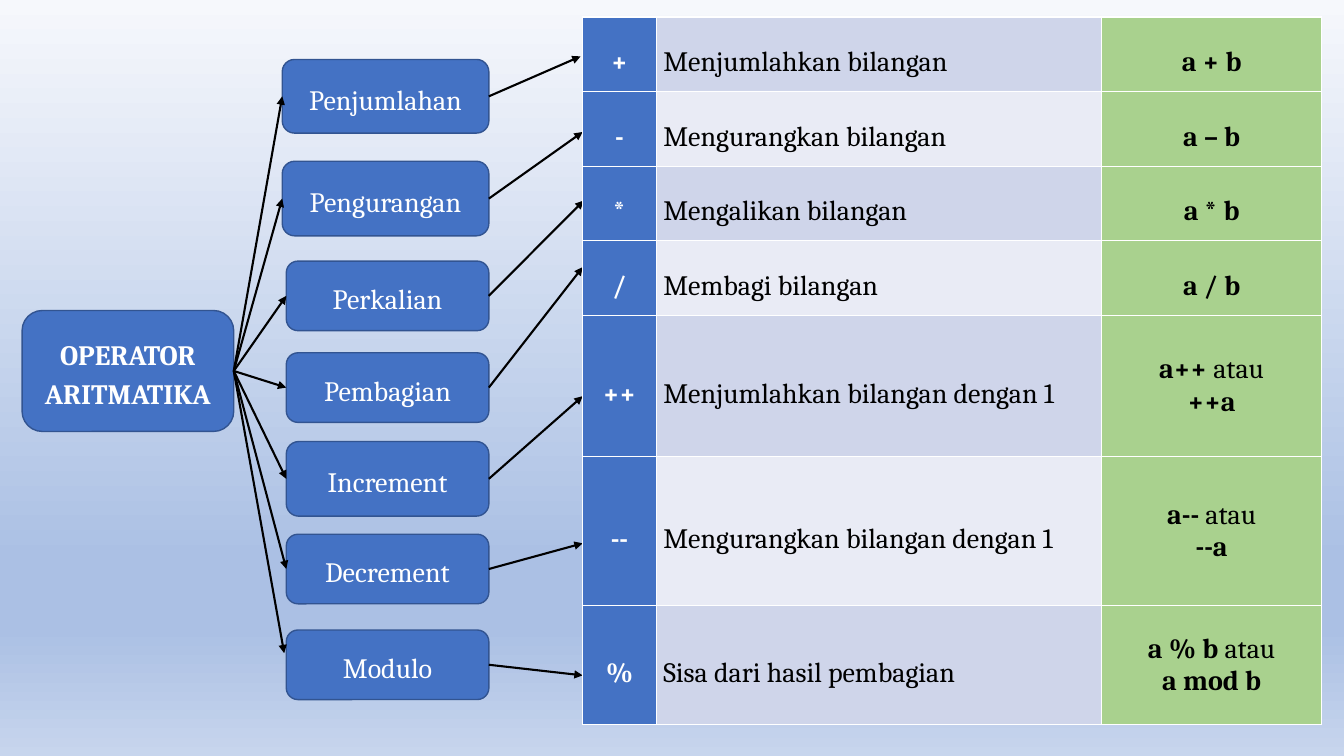
from dataclasses import dataclass
from typing import NamedTuple

from lxml.etree import SubElement
from pptx import Presentation
from pptx.dml.color import RGBColor
from pptx.enum.shapes import MSO_CONNECTOR, MSO_SHAPE
from pptx.enum.text import MSO_ANCHOR, PP_ALIGN
from pptx.oxml.ns import qn
from pptx.util import Pt


@dataclass(frozen=True)
class Theme:
    font: str = "Cambria"
    text_size: int = 20
    blue: str = "4472C4"
    outline: str = "325491"
    white: str = "FFFFFF"
    black: str = "000000"
    green: str = "A9D18E"
    bands: tuple = ("CFD5EA", "E9EBF5")
    background: tuple = ((0, "F6F8FC"), (74, "ABC0E4"), (83, "ABC0E4"), (100, "C7D5ED"))


class Operator(NamedTuple):
    name: str
    left: float
    top: float
    height: float
    arrow_x: float
    arrow_y: float
    row_height: float
    symbol: str
    meaning: str
    formula: tuple


THEME = Theme()
BOX_RIGHT = 349.2
LEFT, RIGHT = 1, 3
TABLE_LEFT, TABLE_TOP = 416.2, 12.2
COLUMN_WIDTHS = (52.6, 318.2, 157)
OPERATORS = (
    Operator("Penjumlahan", 201.6, 42.5, 52.6, 414.7, 40.3, 53.3,
             "+", "Menjumlahkan bilangan", ("a + b",)),
    Operator("Pengurangan", 201.6, 115.2, 53.3, 416.2, 94.3, 53.3,
             "-", "Mengurangkan bilangan", ("a – b",)),
    Operator("Perkalian", 204.5, 186.5, 49.7, 416.9, 143.3, 53.3,
             "*", "Mengalikan bilangan", ("a * b",)),
    Operator("Pembagian", 204.5, 252, 49.7, 416.2, 190.8, 53.3,
             "/", "Membagi bilangan", ("a / b",)),
    Operator("Increment", 204.5, 315.4, 53.3, 416.2, 283, 100.8,
             "++", "Menjumlahkan bilangan dengan 1", ("a++", "++a")),
    Operator("Decrement", 204.5, 381.6, 49.7, 416.2, 388.1, 106.6,
             "--", "Mengurangkan bilangan dengan 1", ("a--", "--a")),
    Operator("Modulo", 204.5, 450, 49.7, 416.2, 482.4, 85,
             "%", "Sisa dari hasil pembagian", ("a % b", "a mod b")),
)


def color(value):
    return RGBColor.from_string(value)


def add_text(paragraph, text, *, ink=THEME.black, bold=False,
             align=PP_ALIGN.CENTER, spacing=1.5):
    paragraph.alignment = align
    paragraph.line_spacing = spacing
    run = paragraph.add_run()
    run.text = text
    run.font.name = THEME.font
    run.font.size = Pt(THEME.text_size)
    run.font.bold = bold
    run.font.color.rgb = color(ink)


def paint_background(slide):
    fill = slide.background.fill
    fill.gradient()
    fill.gradient_angle = 270
    stops = slide.element.xpath(".//a:gsLst")[0]
    for stop in list(stops):
        stops.remove(stop)
    for position, value in THEME.background:
        stop = SubElement(stops, qn("a:gs"), pos=str(position * 1000))
        SubElement(stop, qn("a:srgbClr"), val=value)


def add_box(slide, text, left, top, width, height, *, bold=False):
    shape = slide.shapes.add_shape(
        MSO_SHAPE.ROUNDED_RECTANGLE, Pt(left), Pt(top), Pt(width), Pt(height))
    shape.shadow.inherit = False
    shape.fill.solid()
    shape.fill.fore_color.rgb = color(THEME.blue)
    shape.line.color.rgb = color(THEME.outline)
    shape.line.width = Pt(1)
    frame = shape.text_frame
    frame.word_wrap = True
    frame.vertical_anchor = MSO_ANCHOR.MIDDLE
    add_text(frame.paragraphs[0], text, ink=THEME.white, bold=bold, spacing=1.15)
    return shape


def add_arrow(slide, source, end_x, end_y, target=None):
    connector = slide.shapes.add_connector(
        MSO_CONNECTOR.STRAIGHT, source.left + source.width,
        source.top + source.height // 2, Pt(end_x), Pt(end_y))
    connector.begin_connect(source, RIGHT)
    if target is not None:
        connector.end_connect(target, LEFT)
    connector.line.color.rgb = color(THEME.black)
    connector.line.width = Pt(1.5)
    SubElement(connector.line._get_or_add_ln(), qn("a:tailEnd"), type="triangle")
    SubElement(connector.element.spPr, qn("a:effectLst"))


def style_cell(cell, fill):
    properties = cell._tc.get_or_add_tcPr()
    for side in ("a:lnL", "a:lnR", "a:lnT", "a:lnB"):
        border = SubElement(properties, qn(side), w=str(Pt(1)))
        solid = SubElement(border, qn("a:solidFill"))
        SubElement(solid, qn("a:srgbClr"), val=THEME.white)
    cell.fill.solid()
    cell.fill.fore_color.rgb = color(fill)
    cell.vertical_anchor = MSO_ANCHOR.MIDDLE
    cell.margin_left = cell.margin_right = Pt(5)
    cell.margin_top = cell.margin_bottom = 0
    return cell.text_frame


def write_formula(frame, formula):
    first = frame.paragraphs[0]
    if len(formula) == 1:
        add_text(first, formula[0], bold=True)
        return
    add_text(first, formula[0], bold=True, spacing=1.0)
    add_text(first, " atau", spacing=1.0)
    add_text(frame.add_paragraph(), formula[1], bold=True, spacing=1.0)


def add_operator_table(slide):
    height = sum(operator.row_height for operator in OPERATORS)
    table = slide.shapes.add_table(
        len(OPERATORS), len(COLUMN_WIDTHS), Pt(TABLE_LEFT), Pt(TABLE_TOP),
        Pt(sum(COLUMN_WIDTHS)), Pt(height)).table
    table.first_row = table.horz_banding = False
    for column, width in zip(table.columns, COLUMN_WIDTHS):
        column.width = Pt(width)
    for index, operator in enumerate(OPERATORS):
        row = table.rows[index]
        row.height = Pt(operator.row_height)
        fills = (THEME.blue, THEME.bands[index % 2], THEME.green)
        symbol, meaning, formula = map(style_cell, row.cells, fills)
        add_text(symbol.paragraphs[0], operator.symbol, ink=THEME.white, bold=True)
        add_text(meaning.paragraphs[0], operator.meaning, align=PP_ALIGN.JUSTIFY)
        write_formula(formula, operator.formula)


def main():
    presentation = Presentation()
    presentation.slide_width, presentation.slide_height = Pt(960), Pt(540)
    slide = presentation.slides.add_slide(presentation.slide_layouts[6])
    paint_background(slide)
    root = add_box(slide, "OPERATOR ARITMATIKA", 15.8, 221.8, 151.2, 86.4, bold=True)
    boxes = [
        add_box(slide, operator.name, operator.left, operator.top,
                BOX_RIGHT - operator.left, operator.height)
        for operator in OPERATORS
    ]
    for box in boxes[:-1]:
        add_arrow(slide, root, 0, 0, box)
    add_arrow(slide, root, 203, 466.6)
    for box, operator in zip(boxes, OPERATORS):
        add_arrow(slide, box, operator.arrow_x, operator.arrow_y)
    add_operator_table(slide)
    presentation.save("out.pptx")


if __name__ == "__main__":
    main()
